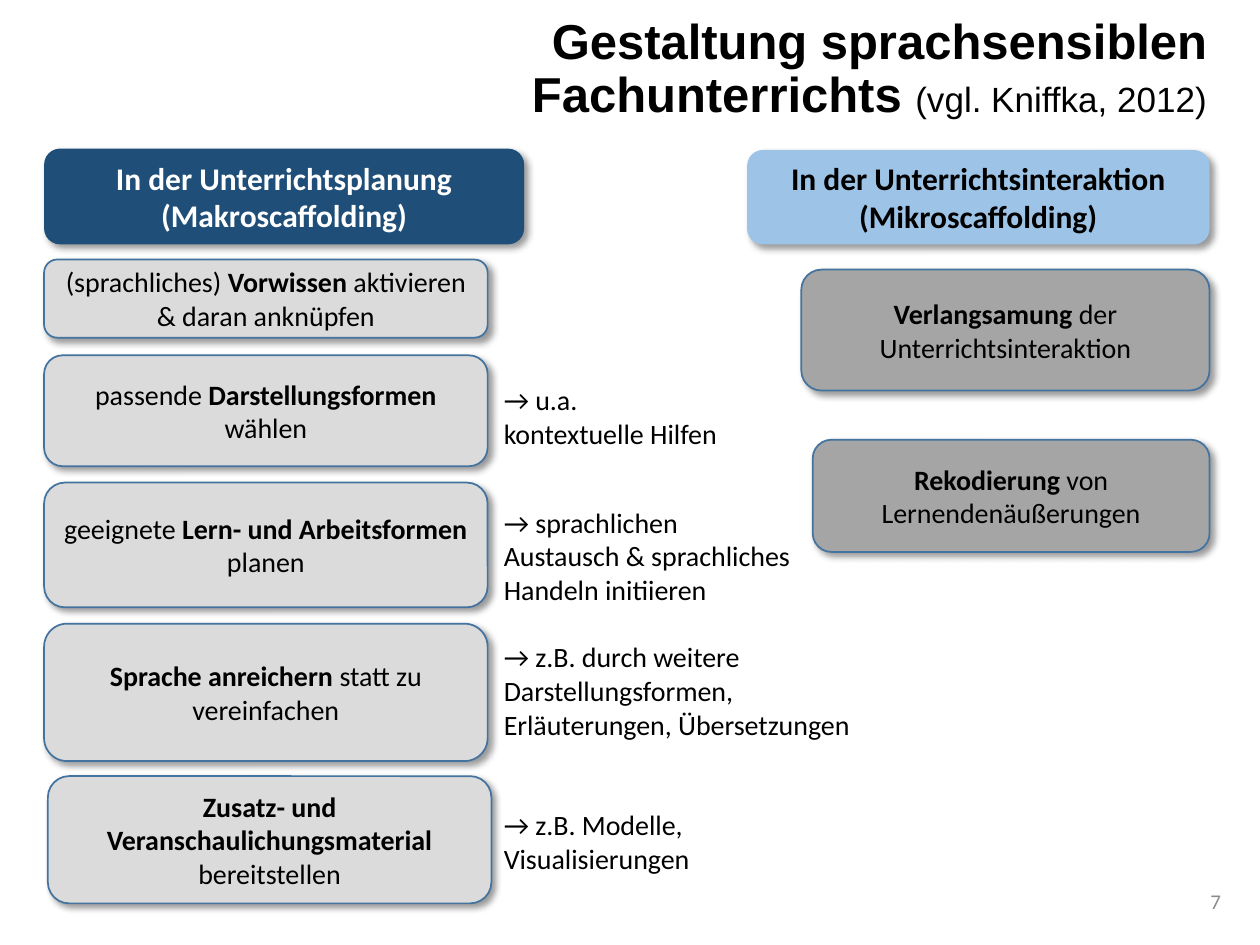
from lxml import etree
from pptx import Presentation
from pptx.dml.color import RGBColor
from pptx.enum.shapes import MSO_SHAPE
from pptx.enum.text import MSO_ANCHOR, MSO_AUTO_SIZE, PP_ALIGN
from pptx.oxml.ns import qn
from pptx.util import Inches, Pt

ROUNDED = MSO_SHAPE.ROUNDED_RECTANGLE
MIDDLE, TOP = MSO_ANCHOR.MIDDLE, MSO_ANCHOR.TOP
LEFT, CENTER, RIGHT = PP_ALIGN.LEFT, PP_ALIGN.CENTER, PP_ALIGN.RIGHT
NO_FIT, GROW = MSO_AUTO_SIZE.NONE, MSO_AUTO_SIZE.SHAPE_TO_FIT_TEXT

COLORS = {
    "black": "000000",
    "white": "FFFFFF",
    "navy": "1F4E79",
    "sky": "9DC3E6",
    "light": "DBDBDB",
    "gray": "A5A5A5",
    "outline": "43739E",
    "number": "8C8C8C",
}
COLUMN_LEFT, COLUMN_RIGHT, NOTE_LEFT = 0.35, 9.6, 3.9
STEP_WIDTH = 3.52

PLANNING_STEPS = [
    (COLUMN_LEFT, 2.06, 0.62, "(sprachliches) **Vorwissen** aktivieren & daran anknüpfen"),
    (COLUMN_LEFT, 2.82, 0.88, "passende **Darstellungsformen** wählen"),
    (COLUMN_LEFT, 3.83, 0.99, "geeignete **Lern- und Arbeitsformen **planen"),
    (COLUMN_LEFT, 4.95, 1.09, "**Sprache anreichern** statt zu vereinfachen"),
    (0.38, 6.16, 1.01, "**Zusatz- und Veranschaulichungsmaterial **bereitstellen"),
]
INTERACTION_STEPS = [
    (2.14, 3.24, 0.96, "**Verlangsamung** der Unterrichtsinteraktion"),
    (3.49, 3.15, 0.89, "**Rekodierung** von Lernendenäußerungen"),
]
NOTES = [
    (2.99, 1.94, 0.64, "→ u.a. kontextuelle Hilfen"),
    (3.96, 2.52, 0.91, "→ sprachlichen Austausch & sprachliches Handeln initiieren"),
    (5.03, 2.97, 0.91, "→ z.B. durch weitere Darstellungsformen, Erläuterungen, Übersetzungen"),
    (6.36, 1.84, 0.64, "→ z.B. Modelle, Visualisierungen"),
]


def color(name):
    """Return the named colour."""
    return RGBColor.from_string(COLORS[name])


def add_span(para, text, size, bold=False, ink="black", face="Calibri"):
    """Add one formatted run."""
    span = para.add_run()
    span.text = text
    span.font.name, span.font.size, span.font.bold = face, Pt(size), bold
    span.font.color.rgb = color(ink)


def write(frame, text, size, align, anchor=MIDDLE, ink="black"):
    """Fill a frame line by line, with **bold** parts."""
    frame.word_wrap = True
    frame.vertical_anchor = anchor
    for index, line in enumerate(text.split("\n")):
        para = frame.add_paragraph() if index else frame.paragraphs[0]
        para.alignment = align
        for part, words in enumerate(line.split("**")):
            if words:
                add_span(para, words, size, part % 2 == 1, ink)


def add_shadow(shape):
    """Give a shape a soft shadow to the lower right."""
    shape.shadow.inherit = False
    effects = shape._element.spPr.find(qn("a:effectLst"))
    shadow = etree.SubElement(
        effects, qn("a:outerShdw"), blurRad=str(Pt(4)), dist=str(Pt(3)),
        dir=str(45 * 60000), algn="tl", rotWithShape="0")
    tint = etree.SubElement(shadow, qn("a:srgbClr"), val=COLORS["black"])
    etree.SubElement(tint, qn("a:alpha"), val="40000")


def add_card(page, place, text, fill, size=16, ink="black", outline="outline"):
    """Add a rounded card with centred text."""
    card = page.shapes.add_shape(ROUNDED, *map(Inches, place))
    card.fill.solid()
    card.fill.fore_color.rgb = color(fill)
    if outline:
        card.line.color.rgb = color(outline)
        card.line.width = Pt(1)
    else:
        card.line.fill.background()
    add_shadow(card)
    write(card.text_frame, text, size, CENTER, ink=ink)


def add_label(page, place, text, size=16, align=LEFT, anchor=TOP, ink="black", fit=GROW):
    """Add a plain text box."""
    box = page.shapes.add_textbox(*map(Inches, place))
    write(box.text_frame, text, size, align, anchor, ink)
    box.text_frame.auto_size = fit


def set_title(page):
    """Place and fill the title placeholder."""
    title = page.shapes.title
    title.left, title.top, title.width, title.height = map(Inches, (3.11, 0.2, 6.57, 0.71))
    frame = title.text_frame
    frame.word_wrap, frame.auto_size, frame.vertical_anchor = True, NO_FIT, MIDDLE
    para = frame.paragraphs[0]
    para.alignment, para.line_spacing = RIGHT, 0.9
    add_span(para, "Gestaltung sprachsensiblen Fachunterrichts ", 28, True, face="Arial")
    add_span(para, "(vgl. Kniffka, 2012)", 20, face="Arial")


def main():
    """Build and save the slide."""
    deck = Presentation()
    deck.slide_width, deck.slide_height = Inches(10), Inches(7.5)
    page = deck.slides.add_slide(deck.slide_layouts[5])
    set_title(page)
    add_card(page, (COLUMN_LEFT, 1.18, 3.81, 0.76),
             "**In der Unterrichtsplanung**\n**(Makroscaffolding)**",
             "navy", 18, "white", None)
    add_card(page, (5.93, 1.19, 3.67, 0.75),
             "**In der Unterrichtsinteraktion (Mikroscaffolding)**",
             "sky", 18, outline=None)
    for left, top, height, text in PLANNING_STEPS:
        add_card(page, (left, top, STEP_WIDTH, height), text, "light")
    for top, width, height, text in INTERACTION_STEPS:
        add_card(page, (COLUMN_RIGHT - width, top, width, height), text, "gray")
    for top, width, height, text in NOTES:
        add_label(page, (NOTE_LEFT, top, width, height), text)
    add_label(page, (7.54, 6.95, 2.25, 0.4), "7", 12, RIGHT, MIDDLE, "number", NO_FIT)
    deck.save("out.pptx")


if __name__ == "__main__":
    main()
